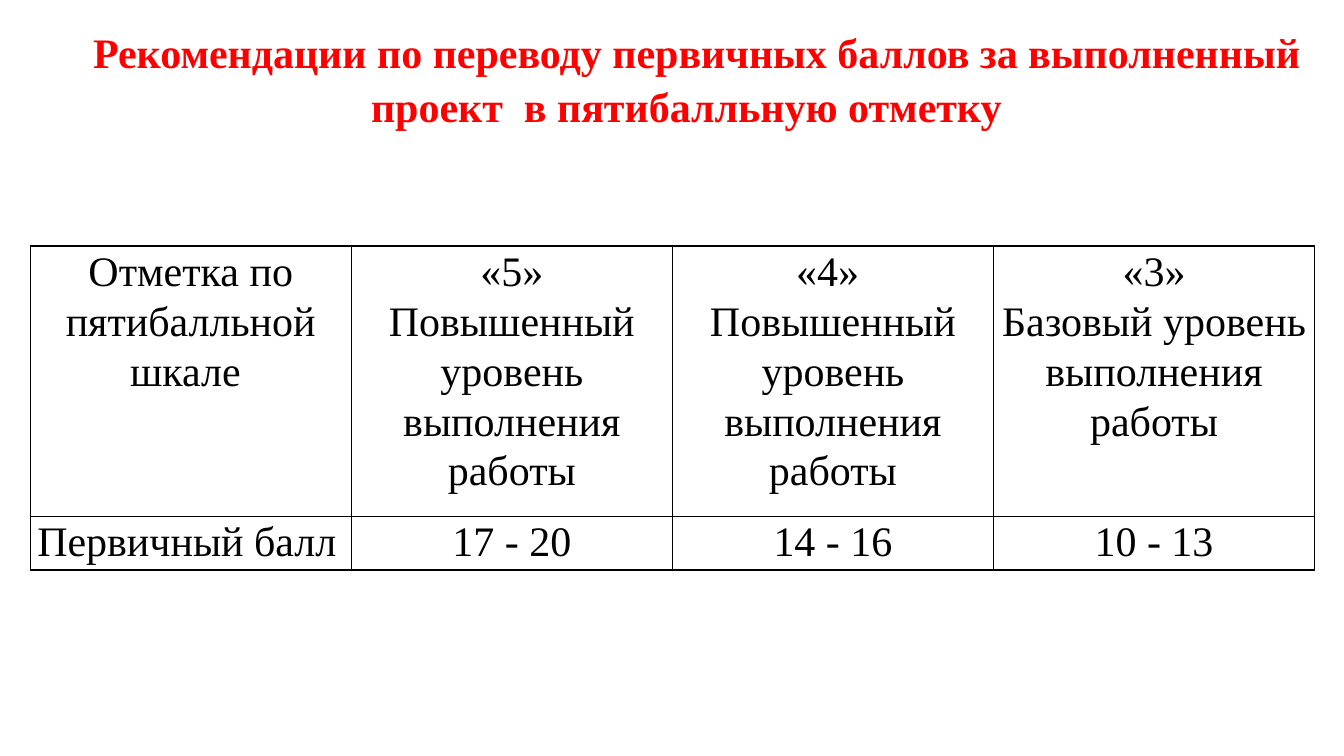
from dataclasses import dataclass

from pptx import Presentation
from pptx.dml.color import RGBColor
from pptx.enum.text import MSO_AUTO_SIZE as AutoSize, PP_ALIGN as Align
from pptx.oxml import parse_xml
from pptx.oxml.ns import nsdecls
from pptx.util import Inches, Pt


@dataclass(frozen=True)
class Theme:
    font: str = "Times New Roman"
    size: int = 30
    line_spacing: float = 1.07
    title: str = "FF0000"
    text: str = "000000"
    border: str = "000000"
    border_width: int = 1


TITLE = ("Рекомендации по переводу первичных баллов за выполненный "
         "проект  в пятибалльную отметку  ")
GRADES = [
    ["Отметка по пятибалльной шкале ",
     "«5»\nПовышенный уровень выполнения работы",
     "«4» \nПовышенный уровень выполнения работы",
     "«3»\nБазовый уровень выполнения работы"],
    ["Первичный балл", "17 - 20", "14 - 16", "10 - 13"],
]
ROW_HEIGHTS = [2.68, 0.53]


class SlideBuilder:
    def __init__(self, slide, theme):
        self.slide = slide
        self.theme = theme

    def set_text(self, frame, text, color, align=Align.CENTER, bold=False):
        """Fill a text frame, one paragraph for each line of text."""
        frame.word_wrap = True
        frame.text = text
        for para in frame.paragraphs:
            para.alignment = align
            para.line_spacing = self.theme.line_spacing
            para.font.name = self.theme.font
            para.font.size = Pt(self.theme.size)
            para.font.bold = bold
            para.font.color.rgb = RGBColor.from_string(color)

    def title(self, text, left, top, width, height, indent):
        box = self.slide.shapes.add_textbox(
            Inches(left), Inches(top), Inches(width), Inches(height))
        frame = box.text_frame
        self.set_text(frame, text, self.theme.title, bold=True)
        frame.auto_size = AutoSize.SHAPE_TO_FIT_TEXT
        for para in frame.paragraphs:
            properties = para._p.get_or_add_pPr()
            properties.set("marL", str(Inches(indent)))
            properties.set("indent", "0")

    def border(self, cell):
        properties = cell._tc.get_or_add_tcPr()
        for index, side in enumerate(("lnL", "lnR", "lnT", "lnB")):
            properties.insert(index, parse_xml(
                f'<a:{side} {nsdecls("a")} w="{Pt(self.theme.border_width)}">'
                f'<a:solidFill><a:srgbClr val="{self.theme.border}"/></a:solidFill>'
                f'</a:{side}>'))

    def table(self, rows, left, top, width, heights):
        table = self.slide.shapes.add_table(
            len(rows), len(rows[0]), Inches(left), Inches(top),
            Inches(width), Inches(sum(heights))).table
        table.first_row = table.horz_banding = False
        for row_index, (texts, height) in enumerate(zip(rows, heights)):
            table.rows[row_index].height = Inches(height)
            for column_index, text in enumerate(texts):
                cell = table.cell(row_index, column_index)
                cell.margin_left = cell.margin_right = Inches(0.07)
                cell.margin_top = cell.margin_bottom = 0
                cell.fill.background()
                self.border(cell)
                is_row_label = row_index > 0 and column_index == 0
                self.set_text(cell.text_frame, text, self.theme.text,
                              Align.JUSTIFY if is_row_label else Align.CENTER)


def main():
    deck = Presentation()
    deck.slide_width, deck.slide_height = Inches(13.33), Inches(7.5)
    page = SlideBuilder(deck.slides.add_slide(deck.slide_layouts[6]), Theme())
    page.title(TITLE, 0, 0.18, 13.33, 1.15, indent=0.5)
    page.table(GRADES, 0.3, 2.44, 12.74, ROW_HEIGHTS)
    deck.save("out.pptx")


if __name__ == "__main__":
    main()
